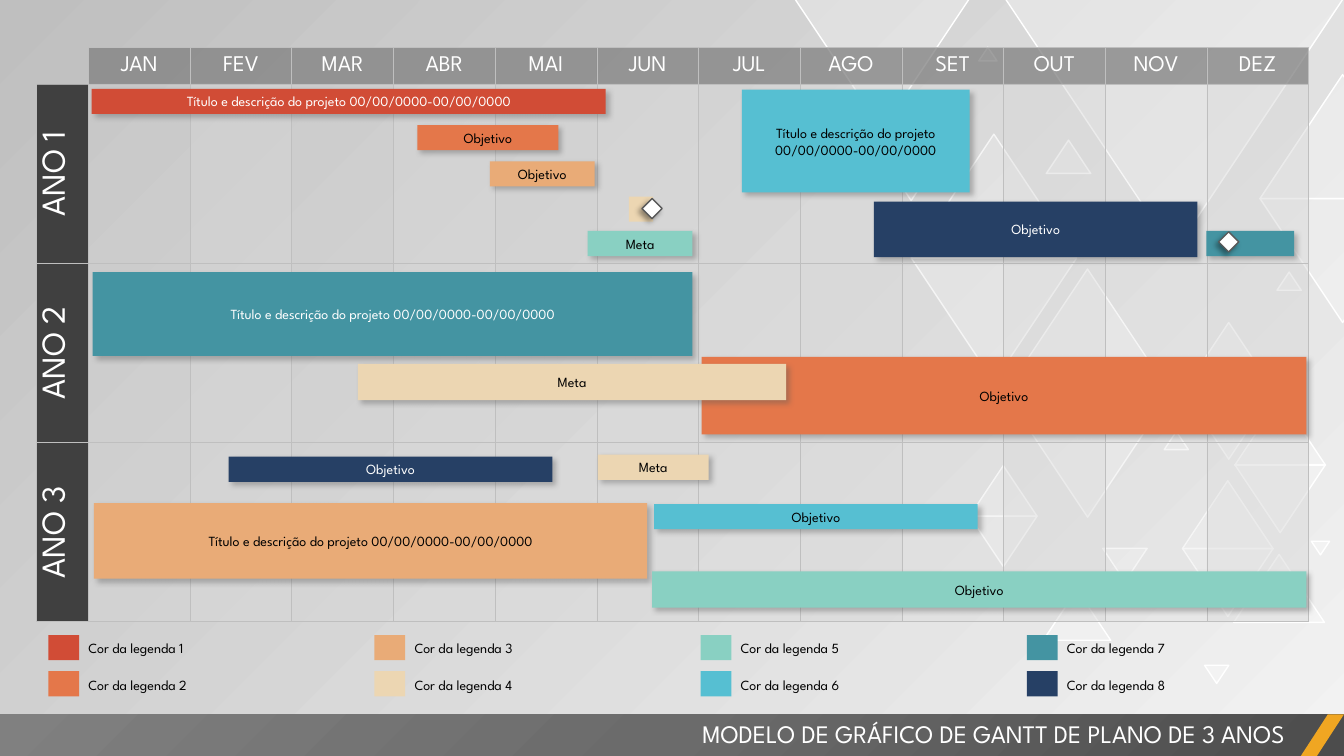
from lxml import etree
from pptx import Presentation, util as u
from pptx.dml.color import RGBColor
from pptx.enum import shapes, text
from pptx.oxml import parse_xml
from pptx.oxml.ns import nsdecls, qn

Pt = u.Pt
FONT = "League Spartan"
COLORS = {
    "white": "FFFFFF", "black": "000000", "bg_light": "F2F2F2", "bg_dark": "BFBFBF",
    "grid": "BFBFBF", "corner": "A6A6A6", "header": "808080", "year": "404040",
    "month": "D9D9D9", "shade": "595959", "accent": "F0A622",
    "band_dark": "4C4C4C", "band_mid": "6B6B6B", "band_light": "808080",
    "red": "D14C36", "orange": "E4774A", "peach": "E9AB77", "sand": "ECD6B2",
    "mint": "89D0C2", "sky": "56BFD2", "teal": "4494A2", "navy": "264065",
}
LEGEND = ["red", "orange", "peach", "sand", "mint", "sky", "teal", "navy"]
WHITE_TEXT = {"red", "teal", "navy"}
MONTHS = "JAN FEV MAR ABR MAI JUN JUL AGO SET OUT NOV DEZ".split()
YEARS = ["ANO 1", "ANO 2", "ANO 3"]
PROJECT = "Título e descrição do projeto 00/00/0000-00/00/0000"
YEAR_W, HEAD_H = 37.2, 26

# left, top, width
TRIANGLES_UP = [
    (650.9, 95.8, 118.1), (717.8, 192.2, 118.1), (881.3, 396, 64.8),
    (844.6, 343.4, 64.8), (845.3, 230.4, 64.8), (882, 283.7, 64.8),
    (745.2, 421.2, 48.2), (692.6, 332.6, 48.2), (900, 53.3, 118.1),
    (831.6, 308.2, 17.3), (912.2, 194.4, 17.3), (699.1, 33.8, 13),
    (747.4, 100.1, 31.7),
]
TRIANGLES_DOWN = [
    (650.9, 184.3, 118.1), (717.8, 280.8, 118.1), (717.8, -1.4, 241.9),
    (844.6, 391.7, 64.8), (845.3, 279.4, 64.8), (882, 331.9, 64.8),
    (692.6, 368.6, 48.2), (900, 141.8, 118.1), (787.7, 391.7, 31.7),
    (860.4, 475.2, 17.3), (642.2, 130.3, 17.3), (936.7, 386.6, 13),
    (567.4, -1.4, 125.3),
]
# left and top from the corner of the calendar, width, height, colour, label;
# a colour of None stands for a milestone
BARS = [
    (39.5, 29.4, 367.2, 18, "red", PROJECT),
    (272.1, 55.3, 100.8, 18, "orange", "Objetivo"),
    (323.9, 81.2, 74.9, 18, "peach", "Objetivo"),
    (423.3, 106.4, 17.3, 18, "sand", ""),
    (393.8, 130.9, 74.9, 18, "mint", "Meta"),
    (503.9, 30.1, 162.7, 73.4, "sky", PROJECT),
    (40.2, 160.4, 428.4, 59.8, "teal", PROJECT),
    (598.2, 110, 231.1, 39.6, "navy", "Objetivo"),
    (432.6, 107.8, 14.4, 14.4, None, ""),
    (475.1, 220.9, 432, 55.4, "orange", "Objetivo"),
    (41, 325.3, 395.3, 54, "peach", PROJECT),
    (401, 290.7, 79.2, 18, "sand", "Meta"),
    (439.8, 374.2, 467.3, 25.9, "mint", "Objetivo"),
    (441.3, 326, 231.1, 18, "sky", "Objetivo"),
    (835.8, 130.9, 62.6, 18, "teal", ""),
    (844.5, 131.6, 14.4, 14.4, None, ""),
    (229.6, 225.9, 306, 25.9, "sand", "Meta"),
    (137.4, 292.2, 231.1, 18, "navy", "Objetivo"),
]


def rgb(name):
    return RGBColor.from_string(COLORS[name])


def fade(xml, percent):
    """Make the first colour found in xml partly transparent."""
    color = next(xml.iter(qn("a:srgbClr")))
    etree.SubElement(color, qn("a:alpha"), val=str(percent * 1000))


def write(tf, words, size=10, color="black", align="CENTER", anchor="MIDDLE"):
    tf.word_wrap = True
    tf.vertical_anchor = getattr(text.MSO_ANCHOR, anchor)
    p = tf.paragraphs[0]
    p.alignment = getattr(text.PP_ALIGN, align)
    r = p.add_run()
    r.text = words
    r.font.name, r.font.size, r.font.bold = FONT, Pt(size), False
    r.font.color.rgb = rgb(color)


def draw(parent, kind, box, fill, line=None):
    sp = parent.shapes.add_shape(getattr(shapes.MSO_SHAPE, kind), *map(Pt, box))
    sp.shadow.inherit = False
    sp.fill.solid()
    sp.fill.fore_color.rgb = rgb(fill)
    if line:
        sp.line.color.rgb = rgb(line)
        sp.line.width = Pt(1)
    else:
        sp.line.fill.background()
    return sp


def cast_shadow(sp, color, angle):
    effects = sp.element.spPr.find(qn("a:effectLst"))
    effects.append(parse_xml(
        f'<a:outerShdw {nsdecls("a")} blurRad="{Pt(4)}" dist="{Pt(3)}" dir="{angle * 60000}" '
        f'algn="ctr" rotWithShape="0"><a:srgbClr val="{COLORS[color]}"/></a:outerShdw>'))
    fade(effects, 40)


def add_backdrop(s):
    fill = s.background.fill
    fill.gradient()
    fill.gradient_angle = 135
    for stop, name in zip(fill.gradient_stops, ("bg_light", "bg_dark")):
        stop.color.rgb = rgb(name)
    group = s.shapes.add_group_shape()
    for triangles, angle in ((TRIANGLES_UP, 0), (TRIANGLES_DOWN, 180)):
        for x, y, w in triangles:
            sp = draw(group, "ISOSCELES_TRIANGLE", (x, y, w, w * 0.75), "white", "white")
            sp.rotation = angle
            fade(sp.element.spPr, 30)


def add_title_band(s, x, y, w, h):
    band = draw(s, "RECTANGLE", (x, y, w, h), "band_dark")
    stops = "".join(
        f'<a:gs pos="{pos}"><a:srgbClr val="{COLORS[name]}"/></a:gs>'
        for pos, name in ((0, "band_dark"), (50000, "band_mid"), (100000, "band_light")))
    solid = band.element.spPr.find(qn("a:solidFill"))
    solid.getparent().replace(solid, parse_xml(
        f'<a:gradFill {nsdecls("a")} rotWithShape="1"><a:gsLst>{stops}</a:gsLst>'
        '<a:path path="circle"><a:fillToRect l="100000" t="100000"/></a:path></a:gradFill>'))
    draw(s, "PARALLELOGRAM", (x + w - 31, y, 31, h), "accent").adjustments[0] = 0.65
    title = s.shapes.title
    title.left, title.top, title.width, title.height = map(Pt, (x + w - 582, y - 0.5, 547, 29))
    title.element.getparent().append(title.element)
    title.text_frame.auto_size = text.MSO_AUTO_SIZE.NONE
    write(title.text_frame, "MODELO DE GRÁFICO DE GANTT DE PLANO DE 3 ANOS",
          size=18, color="white", align="RIGHT", anchor="TOP")


def format_cell(cell, fill=None, alpha=100, borders=None):
    """Fill a cell and outline the sides in borders, a dict of side to colour."""
    if fill:
        cell.fill.solid()
        cell.fill.fore_color.rgb = rgb(fill)
    else:
        cell.fill.background()
    tc_pr = cell._tc.get_or_add_tcPr()
    if alpha < 100:
        fade(tc_pr, alpha)
    for i, (side, color) in enumerate(borders.items()):
        tc_pr.insert(i, parse_xml(
            f'<a:ln{side} {nsdecls("a")} w="{Pt(0.5)}"><a:solidFill>'
            f'<a:srgbClr val="{COLORS[color]}"/></a:solidFill></a:ln{side}>'))


def add_calendar(s, x, y, w, h):
    frame = s.shapes.add_table(len(YEARS) + 1, len(MONTHS) + 1, *map(Pt, (x, y, w, h)))
    table = frame.table
    table.first_row = table.horz_banding = False
    style = next(table._tbl.iter(qn("a:tableStyleId")))
    style.text = "{2D5ABB26-0587-4C30-8999-92F81FD0307C}"
    for i, column in enumerate(table.columns):
        column.width = Pt((w - YEAR_W) / len(MONTHS) if i else YEAR_W)
    for i, row in enumerate(table.rows):
        row.height = Pt((h - HEAD_H) / len(YEARS) if i else HEAD_H)
    grid = dict.fromkeys("LRTB", "grid")
    corner = table.cell(0, 0)
    corner.margin_top = corner.margin_bottom = 0
    format_cell(corner, borders={"B": "corner"})
    for c, month in enumerate(MONTHS, 1):
        cell = table.cell(0, c)
        write(cell.text_frame, month, size=16, color="white")
        cell.vertical_anchor = text.MSO_ANCHOR.MIDDLE
        format_cell(cell, "header", 75, grid)
    for i, year in enumerate(YEARS, 1):
        cell = table.cell(i, 0)
        write(cell.text_frame, year, size=24, color="white")
        cell.vertical_anchor = text.MSO_ANCHOR.MIDDLE
        format_cell(cell, "year", borders={**grid, "T": "corner" if i == 1 else "grid"})
        cell._tc.tcPr.set("vert", "vert270")
        for c in range(1, len(MONTHS) + 1):
            format_cell(table.cell(i, c), "month", 25 if c % 2 else 50, grid)


def add_bars(s, x, y):
    for left, top, w, h, color, label in BARS:
        box = (x + left, y + top, w, h)
        if color is None:
            cast_shadow(draw(s, "DIAMOND", box, "white", "shade"), "black", 135)
            continue
        bar = draw(s, "RECTANGLE", box, color)
        if color != "sand" or label:
            cast_shadow(bar, "shade", 45)
        if label:
            write(bar.text_frame, label, color="white" if color in WHITE_TEXT else "black")


def add_legend(s, x, y, column_w, row_h):
    for i, color in enumerate(LEGEND):
        left, top = x + i // 2 * column_w, y + i % 2 * row_h
        draw(s, "RECTANGLE", (left, top, 22, 18), color)
        label = s.shapes.add_textbox(*map(Pt, (left + 21.5, top, 173, 19.4)))
        write(label.text_frame, f"Cor da legenda {i + 1}", align="LEFT", anchor="TOP")


def main():
    prs = Presentation()
    prs.slide_width, prs.slide_height = Pt(960), Pt(540)
    s = prs.slides.add_slide(prs.slide_layouts[5])
    add_backdrop(s)
    add_title_band(s, 0, 510.3, 960, 30)
    add_calendar(s, 26, 34, 909, 410)
    add_bars(s, 26, 34)
    add_legend(s, 34.5, 453.6, 233, 25.8)
    prs.save("out.pptx")


if __name__ == "__main__":
    main()
